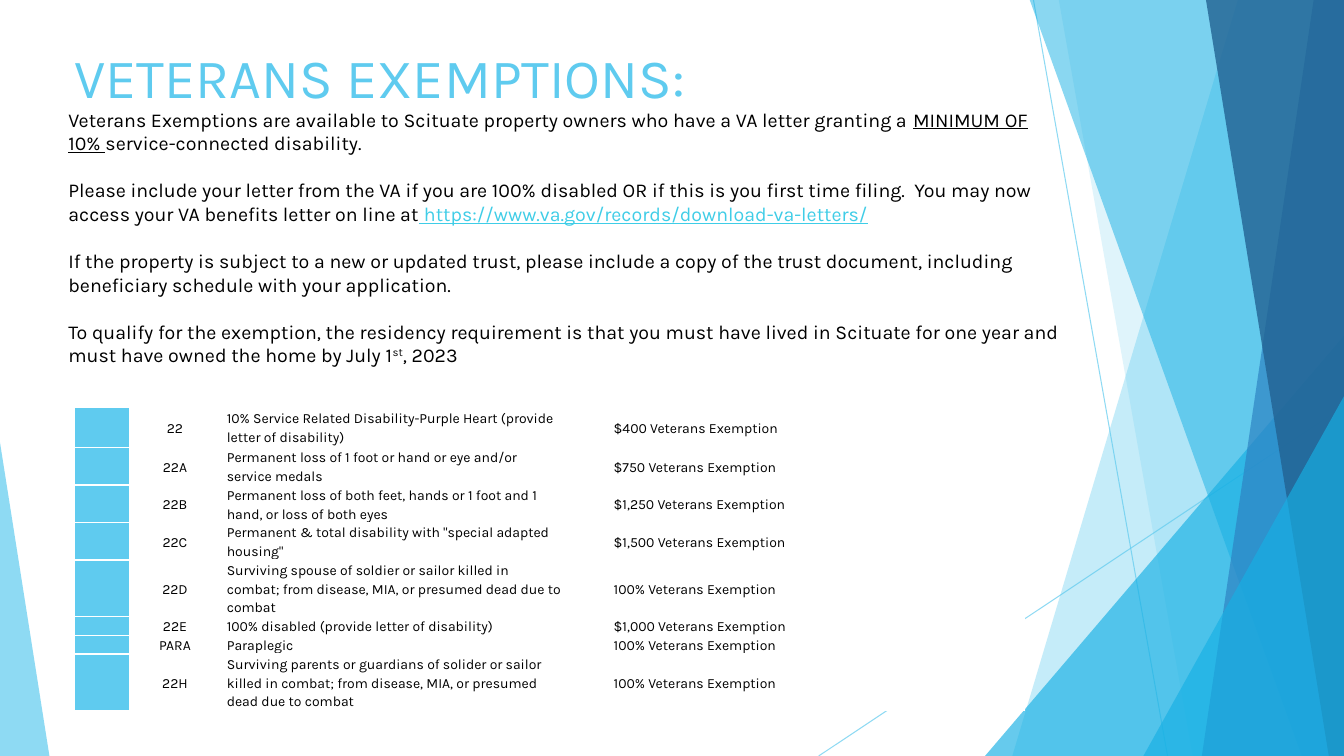
import lxml.etree
import pptx
import pptx.dml.color
import pptx.enum.shapes
import pptx.enum.text
import pptx.oxml.ns
import pptx.util

Inches = pptx.util.Inches
Pt = pptx.util.Pt
qn = pptx.oxml.ns.qn
ALIGN = pptx.enum.text.PP_ALIGN
MIDDLE = pptx.enum.text.MSO_ANCHOR.MIDDLE

WIDTH, HEIGHT = 13.33, 7.5
SKY, AZURE, BLUE, NAVY = "5FCBEF", "17B0E4", "2E83C3", "226292"
LINK, BLACK, WHITE = "3FCDE7", "000000", "FFFFFF"

COLUMN_WIDTHS = [0.55, 0.89, 3.48, 0.17, 0.17, 4.14]
ROW_HEIGHTS = [0.4, 0.37, 0.37, 0.37, 0.56, 0.18, 0.18, 0.56]
EXEMPTIONS = [
    ("22", "10% Service Related Disability-Purple Heart (provide letter of disability)", "$400"),
    ("22A", "Permanent loss of 1 foot or hand or eye and/or service medals", "$750"),
    ("22B", "Permanent loss of both feet, hands or 1 foot and 1 hand, or loss of both eyes", "$1,250"),
    ("22C", 'Permanent & total disability with "special adapted housing"', "$1,500"),
    ("22D", "Surviving spouse of soldier or sailor killed in combat; from disease, MIA, "
            "or presumed dead due to combat", "100%"),
    ("22E", "100% disabled (provide letter of disability)", "$1,000"),
    ("PARA", "Paraplegic", "100%"),
    ("22H", "Surviving parents or guardians of solider or sailor killed in combat; from disease, "
            "MIA, or presumed dead due to combat", "100%"),
]

UNDERLINED = {"underline": True}
BODY = [
    [("Veterans Exemptions are available to Scituate property owners who have a VA letter granting a ", {}),
     ("MINIMUM OF 10% ", UNDERLINED),
     ("service-connected disability.", {})],
    [("Please include your letter from the VA if you are 100% disabled OR if this is you first time "
      "filing.  You may now access your VA benefits letter on line at", {}),
     (" https://www.va.gov/records/download-va-letters/", {"underline": True, "color": LINK})],
    [("If the property is subject to a new or updated trust, please include a copy of the trust "
      "document, including beneficiary schedule with your application.", {})],
    [("To qualify for the exemption, the residency requirement is that you must have lived in Scituate "
      "for one year and must have owned the home by July 1", {}),
     ("st", {"baseline": 30000}),
     (", 2023", {})],
]


def rgb(code):
    """Turn a hex string into a colour."""
    return pptx.dml.color.RGBColor.from_string(code)


def apply(target, values):
    """Set every attribute in a dict of format values."""
    for name, value in values.items():
        setattr(target, name, value)


def add_span(para, text, size, color=BLACK, baseline=None, **values):
    """Add one formatted run to a paragraph."""
    span = para.add_run()
    span.text = text
    apply(span.font, {"name": "Karla", "size": Pt(size), **values})
    span.font.color.rgb = rgb(color)
    if baseline:
        span._r.get_or_add_rPr().set("baseline", str(baseline))


def set_opacity(shape, percent):
    """Make the shape's fill or line colour partly transparent."""
    color = shape._element.spPr.find(".//" + qn("a:srgbClr"))
    lxml.etree.SubElement(color, qn("a:alpha")).set("val", str(percent * 1000))


def paint(shape, color, opacity):
    """Give a shape a translucent fill with no outline or shadow."""
    shape.shadow.inherit = False
    shape.fill.solid()
    shape.fill.fore_color.rgb = rgb(color)
    set_opacity(shape, opacity)
    shape.line.fill.background()


def add_ray(slide, start, end):
    """Add a thin translucent line."""
    ray = slide.shapes.add_connector(
        pptx.enum.shapes.MSO_CONNECTOR.STRAIGHT, *map(Inches, start + end))
    ray.line.width = Pt(0.75)
    ray.line.color.rgb = rgb(SKY)
    set_opacity(ray, 70)
    lxml.etree.SubElement(ray._element.spPr, qn("a:effectLst"))


def add_band(slide, top_x, bottom_x, color, opacity):
    """Add a full-height band running from a slanted left edge to the slide's right edge."""
    top = -0.01
    corners = [(WIDTH, top), (WIDTH, HEIGHT), (bottom_x, HEIGHT)]
    builder = slide.shapes.build_freeform(Inches(top_x), Inches(top))
    builder.add_line_segments([(Inches(x), Inches(y)) for x, y in corners], close=True)
    paint(builder.convert_to_shape(), color, opacity)


def add_wedge(slide, left, top, width, apex, color, opacity):
    """Add a right triangle standing on the slide's bottom edge."""
    wedge = slide.shapes.add_shape(
        pptx.enum.shapes.MSO_SHAPE.ISOSCELES_TRIANGLE,
        *map(Inches, (left, top, width, HEIGHT - top)))
    wedge.adjustments[0] = apex
    paint(wedge, color, opacity)


def add_facets(slide):
    """Draw the layered blue decoration at both sides."""
    add_ray(slide, (10.25, 0), (11.58, HEIGHT))
    add_ray(slide, (WIDTH, 4.03), (8.12, HEIGHT))
    add_band(slide, 12.28, 10.04, SKY, 36)
    add_band(slide, 10.5, 11.83, SKY, 20)
    add_wedge(slide, 9.77, 3.33, 3.56, 1, AZURE, 66)
    add_band(slide, 10.21, 12.91, AZURE, 50)
    add_band(slide, 13.03, 11.92, BLUE, 70)
    add_band(slide, 11.96, 13.18, NAVY, 80)
    add_wedge(slide, 11.34, 3.93, 1.99, 1, AZURE, 66)
    add_wedge(slide, 0, 4.39, 0.49, 0, SKY, 70)


def set_title(slide, text):
    """Place and format the title placeholder."""
    title = slide.shapes.title
    apply(title, {"left": Inches(0.64), "top": Inches(0.49),
                  "width": Inches(9.5), "height": Inches(0.53)})
    apply(title.text_frame, {"vertical_anchor": MIDDLE, "word_wrap": True,
                             "auto_size": pptx.enum.text.MSO_AUTO_SIZE.NONE})
    para = title.text_frame.paragraphs[0]
    para.alignment = ALIGN.LEFT
    add_span(para, text, 39.6, SKY)


def add_body(slide):
    """Add the explanatory paragraphs."""
    box = slide.shapes.add_textbox(*map(Inches, (0.58, 1.02, 10.04, 3)))
    frame = box.text_frame
    frame.word_wrap = True
    for index, spans in enumerate(BODY):
        para = frame.add_paragraph() if index else frame.paragraphs[0]
        para.space_before = Pt(16.8 if index else 0)
        for text, values in spans:
            add_span(para, text, 14, **values)


def add_borders(cell):
    """Give a cell white one-point borders."""
    properties = cell._tc.get_or_add_tcPr()
    for side in ("lnL", "lnR", "lnT", "lnB"):
        line = lxml.etree.SubElement(properties, qn("a:" + side), w=str(Pt(1)))
        fill = lxml.etree.SubElement(line, qn("a:solidFill"))
        lxml.etree.SubElement(fill, qn("a:srgbClr"), val=WHITE)


def fill_cell(cell, text, color, alignment):
    """Write and format one table cell."""
    apply(cell, {"margin_left": Inches(0.07), "margin_right": Inches(0.07),
                 "margin_top": 0, "margin_bottom": 0, "vertical_anchor": MIDDLE})
    add_borders(cell)
    cell.fill.solid()
    cell.fill.fore_color.rgb = rgb(color)
    para = cell.text_frame.paragraphs[0]
    apply(para, {"alignment": alignment, "line_spacing": 1.15})
    if text:
        add_span(para, text, 10)
    else:
        lxml.etree.SubElement(para._p, qn("a:endParaRPr"), sz="1000")


def add_exemptions(slide):
    """Add the table of exemption codes."""
    table = slide.shapes.add_table(
        len(EXEMPTIONS), len(COLUMN_WIDTHS), *map(Inches, (0.74, 4.04, 9.4, 3))).table
    apply(table, {"first_row": False, "horz_banding": False})
    for column, width in zip(table.columns, COLUMN_WIDTHS):
        column.width = Inches(width)
    for row, height, (code, reason, amount) in zip(table.rows, ROW_HEIGHTS, EXEMPTIONS):
        row.height = Inches(height)
        texts = ["", code, reason, "", "", f"{amount} Veterans Exemption"]
        for index, (cell, text) in enumerate(zip(row.cells, texts)):
            fill_cell(cell, text, WHITE if index else SKY,
                      ALIGN.CENTER if index == 1 else ALIGN.LEFT)


def main():
    """Build the slide and save the deck."""
    deck = pptx.Presentation()
    apply(deck, {"slide_width": Inches(WIDTH), "slide_height": Inches(HEIGHT)})
    page = deck.slides.add_slide(deck.slide_layouts[5])
    add_facets(page)
    set_title(page, "VETERANS EXEMPTIONS:")
    add_exemptions(page)
    add_body(page)
    deck.save("out.pptx")


if __name__ == "__main__":
    main()
